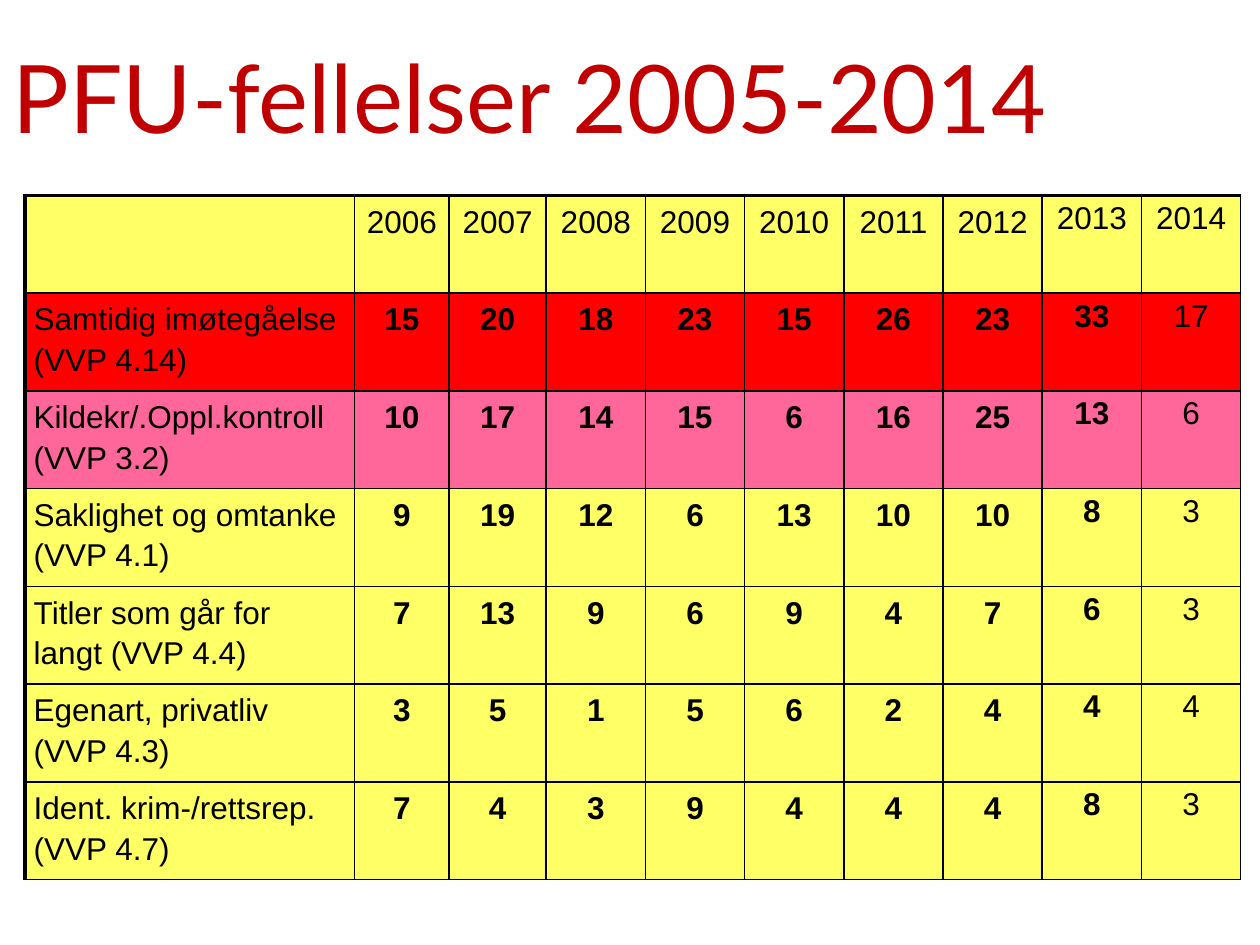
from lxml import etree
from pptx import Presentation
from pptx import util as u
from pptx.dml.color import RGBColor
from pptx.enum import text
from pptx.oxml.ns import qn

BLACK = RGBColor(0, 0, 0)
DARK_RED = RGBColor(0xC0, 0, 0)
RED = RGBColor(0xFF, 0, 0)
PINK = RGBColor(0xFF, 0x66, 0x99)
YELLOW = RGBColor(0xFF, 0xFF, 0x66)

THIN, THICK = 1, 2.25
COLUMN_WIDTHS = [6.65, 1.9, 1.96] + [2.0] * 7
ROW_HEIGHT = 1.97
LATE_YEARS = (2013, 2014)
YEARS = list(range(2006, 2015))

# Label lines, row colour, one count per year
RULES = [
    (["Samtidig imøtegåelse", "(VVP 4.14)"], RED, [15, 20, 18, 23, 15, 26, 23, 33, 17]),
    (["Kildekr/.Oppl.kontroll", "(VVP 3.2)"], PINK, [10, 17, 14, 15, 6, 16, 25, 13, 6]),
    (["Saklighet og omtanke", "(VVP 4.1)"], YELLOW, [9, 19, 12, 6, 13, 10, 10, 8, 3]),
    (["Titler som går for langt (VVP 4.4)"], YELLOW, [7, 13, 9, 6, 9, 4, 7, 6, 3]),
    (["Egenart, privatliv (VVP 4.3)"], YELLOW, [3, 5, 1, 5, 6, 2, 4, 4, 4]),
    (["Ident. krim-/rettsrep.", "(VVP 4.7)"], YELLOW, [7, 4, 3, 9, 4, 4, 4, 8, 3]),
]


def set_values(target, values):
    for name, value in values.items():
        setattr(target, name, value)


class SlideBuilder:
    title_font = {"name": "Lato", "size": u.Pt(54), "bold": False}
    cell_font = {"name": "Arial", "size": u.Pt(18)}

    def __init__(self, page):
        self.page = page

    def title(self, wording, left, top, width, height):
        box = self.page.shapes.title
        set_values(box, {"left": u.Cm(left), "top": u.Cm(top),
                         "width": u.Cm(width), "height": u.Cm(height)})
        set_values(box.text_frame, {"vertical_anchor": text.MSO_ANCHOR.MIDDLE,
                                    "word_wrap": True})
        para = box.text_frame.paragraphs[0]
        para.alignment = text.PP_ALIGN.LEFT
        self.add_span(para, wording, self.title_font, DARK_RED)

    def add_span(self, para, wording, font, color):
        span = para.add_run()
        span.text = wording
        set_values(span.font, font)
        span.font.color.rgb = color

    def table(self, left, top, row_count):
        frame = self.page.shapes.add_table(
            row_count, len(COLUMN_WIDTHS), u.Cm(left), u.Cm(top),
            u.Cm(sum(COLUMN_WIDTHS)), u.Cm(ROW_HEIGHT * row_count))
        table = frame.table
        set_values(table, {"first_row": False, "horz_banding": False})
        for column, width in zip(table.columns, COLUMN_WIDTHS):
            column.width = u.Cm(width)
        for row in table.rows:
            row.height = u.Cm(ROW_HEIGHT)
        return table

    def borders(self, cell, widths):
        """Add the cell's lines; they must come before its fill in the XML."""
        properties = cell._tc.get_or_add_tcPr()
        for side, width in widths.items():
            line = etree.SubElement(properties, qn(f"a:ln{side}"), w=str(u.Pt(width)))
            fill = etree.SubElement(line, qn("a:solidFill"))
            etree.SubElement(fill, qn("a:srgbClr"), val=str(BLACK))

    def cell(self, cell, lines, fill, widths, alignment, bold=False, flush=False):
        self.borders(cell, widths)
        cell.fill.solid()
        cell.fill.fore_color.rgb = fill
        across, down = (0, 0) if flush else (0.18, 0.08)
        set_values(cell, {"margin_left": u.Cm(across), "margin_right": u.Cm(across),
                          "margin_top": u.Cm(down), "margin_bottom": u.Cm(down)})
        frame = cell.text_frame
        for index, line in enumerate(lines):
            para = frame.add_paragraph() if index else frame.paragraphs[0]
            set_values(para, {"alignment": alignment, "line_spacing": 1.15})
            self.add_span(para, line, {**self.cell_font, "bold": bold}, BLACK)


def main():
    deck = Presentation()
    set_values(deck, {"slide_width": u.Cm(25.4), "slide_height": u.Cm(19.05)})
    builder = SlideBuilder(deck.slides.add_slide(deck.slide_layouts[5]))
    builder.title("PFU-fellelser 2005-2014", 0, 0.74, 22.2, 2.39)

    rows = [([], YELLOW, YEARS)] + RULES
    table = builder.table(0.5, 3.94, len(rows))
    for r, (label, fill, values) in enumerate(rows):
        for c, lines in enumerate([label] + [[str(value)] for value in values]):
            year = YEARS[c - 1] if c else None
            widths = {"L": THIN if c else THICK, "R": THIN,
                      "T": THIN if r else THICK, "B": THIN}
            builder.cell(
                table.cell(r, c), lines, fill, widths,
                text.PP_ALIGN.CENTER if c else text.PP_ALIGN.LEFT,
                bold=r > 0 and c > 0 and year != YEARS[-1],
                flush=year in LATE_YEARS)
    deck.save("out.pptx")


if __name__ == "__main__":
    main()
